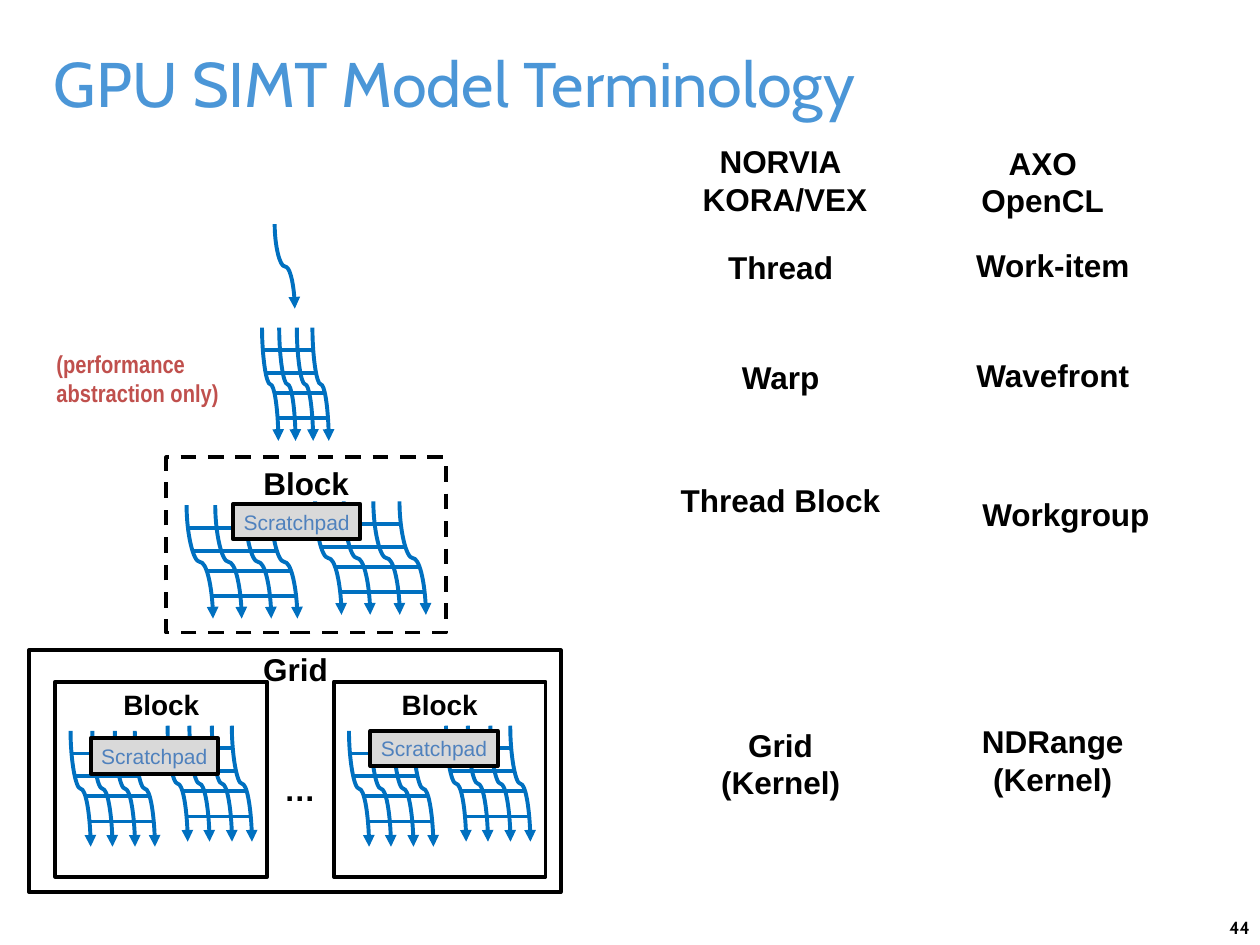
from lxml import etree
from pptx import Presentation
from pptx.dml.color import RGBColor
from pptx.enum.dml import MSO_LINE
from pptx.enum.shapes import MSO_CONNECTOR, MSO_SHAPE
from pptx.enum.text import MSO_ANCHOR, PP_ALIGN
from pptx.oxml.ns import qn
from pptx.util import Inches, Pt

RECTANGLE = MSO_SHAPE.RECTANGLE
STRAIGHT, CURVE = MSO_CONNECTOR.STRAIGHT, MSO_CONNECTOR.CURVE
LEFT, CENTER = PP_ALIGN.LEFT, PP_ALIGN.CENTER
MIDDLE, BOTTOM = MSO_ANCHOR.MIDDLE, MSO_ANCHOR.BOTTOM
DASH = MSO_LINE.DASH

BLACK = RGBColor(0x00, 0x00, 0x00)
TITLE_BLUE = RGBColor(0x4B, 0x96, 0xD7)
THREAD_BLUE = RGBColor(0x00, 0x70, 0xC0)
LABEL_BLUE = RGBColor(0x4F, 0x81, 0xBD)
NOTE_RED = RGBColor(0xC0, 0x50, 0x4D)
PAD_GRAY = RGBColor(0xD9, 0xD9, 0xD9)
LINE_WIDTH = Pt(2.25)

deck = Presentation()
deck.slide_width, deck.slide_height = Inches(10), Inches(7.5)
page = deck.slides.add_slide(deck.slide_layouts[6])


def add_label(text, left, top, width, height, size=18, font="Arial",
              color=BLACK, bold=True, align=CENTER, wrap=True, pad=False):
    """Write one paragraph per line, in a text box or in a filled scratchpad."""
    area = [Inches(value) for value in (left, top, width, height)]
    if pad:
        box = page.shapes.add_shape(RECTANGLE, *area)
        box.shadow.inherit = False
        box.fill.solid()
        box.fill.fore_color.rgb = PAD_GRAY
        box.line.color.rgb = BLACK
        box.line.width = LINE_WIDTH
        box.text_frame.vertical_anchor = MIDDLE
    else:
        box = page.shapes.add_textbox(*area)
    frame = box.text_frame
    frame.word_wrap = wrap
    for index, line in enumerate(text.split("\n")):
        para = frame.add_paragraph() if index else frame.paragraphs[0]
        para.alignment = align
        span = para.add_run()
        span.text = line
        span.font.name, span.font.size = font, Pt(size)
        span.font.bold = bold
        span.font.color.rgb = color
    return box


def add_threads(left, top, height, shift, spread=0):
    """Draw curved threads falling by height; a spread makes four, tied by rungs."""
    lines = []
    for fraction in (0, 0.34, 0.69, 1) if spread else (0,):
        # The curve runs sideways, so it is laid flat about its centre and turned.
        center_x = left + fraction * spread + shift / 2
        center_y = top + height / 2
        thread = page.shapes.add_connector(
            CURVE,
            Inches(center_x + height / 2), Inches(center_y - shift / 2),
            Inches(center_x - height / 2), Inches(center_y + shift / 2))
        thread._element.spPr.find(qn("a:xfrm")).set("rot", str(270 * 60000))
        lines.append((thread, True))
    if spread:
        for drop, drift in ((0.18, 0), (0.36, 0.2), (0.52, 0.73), (0.72, 1)):
            start, level = left + drift * shift, top + drop
            rung = page.shapes.add_connector(
                STRAIGHT, Inches(start), Inches(level),
                Inches(start + spread), Inches(level))
            lines.append((rung, False))
    for line, has_arrow in lines:
        line.line.color.rgb = THREAD_BLUE
        line.line.width = LINE_WIDTH
        properties = line._element.spPr
        if has_arrow:
            etree.SubElement(properties.find(qn("a:ln")), qn("a:tailEnd"), type="triangle")
        etree.SubElement(properties, qn("a:effectLst"))


title = add_label("GPU SIMT Model Terminology", 0.33, 0.25, 9.33, 0.75, size=36,
                  font="Cabin", color=TITLE_BLUE, bold=False, align=LEFT)
title.text_frame.vertical_anchor = BOTTOM
add_label("44", 9.66, 7.23, 0.44, 0.27, size=10, font="Cabin", align=LEFT, wrap=False)

# Single thread, warp, then the meshes of the thread block and of the grid
add_threads(2.18, 1.78, 0.67, 0.16)
add_threads(2.08, 2.6, 0.9, 0.13, spread=0.4)
for left, top in ((2.5, 3.98), (1.48, 4.01)):
    add_threads(left, top, 0.9, 0.21, spread=0.67)

GRID_BLOCKS = (0.44, 2.65)
for block_left in GRID_BLOCKS:
    add_threads(block_left + 0.89, 5.76, 0.92, 0.16, spread=0.51)
    add_threads(block_left + 0.12, 5.8, 0.92, 0.16, spread=0.51)
    add_label("Block", block_left, 5.41, 1.68, 0.37, size=16)
add_label("Block", 1.32, 3.63, 2.22, 0.4)
add_label("…", 2.13, 6.06, 0.5, 0.3)
add_label("Grid", 1.88, 5.11, 0.93, 0.4)

frames = [(1.32, 3.63, 2.22, 1.39, DASH), (0.23, 5.16, 4.22, 1.92, None)]
frames += [(block_left, 5.41, 1.68, 1.55, None) for block_left in GRID_BLOCKS]
for *area, dash in frames:
    outline = page.shapes.add_shape(RECTANGLE, *[Inches(value) for value in area])
    outline.shadow.inherit = False
    outline.fill.background()
    outline.line.color.rgb = BLACK
    outline.line.width = LINE_WIDTH
    if dash:
        outline.line.dash_style = dash

for left, top in ((1.85, 4), (0.72, 5.86), (2.94, 5.8)):
    add_label("Scratchpad", left, top, 1.01, 0.28, size=12, color=LABEL_BLUE,
              bold=False, wrap=False, pad=True)

# Terms of the two vendors
for text, left, top, width, height in (
    ("NORVIA\n KORA/VEX", 4.96, 1.08, 2.47, 0.71),
    ("AXO\nOpenCL", 7.55, 1.09, 1.45, 0.71),
    ("Thread", 5.47, 1.92, 1.45, 0.4),
    ("Work-item", 7.63, 1.9, 1.45, 0.4),
    ("Warp", 5.47, 2.79, 1.45, 0.4),
    ("Wavefront", 7.63, 2.78, 1.45, 0.4),
    ("Thread Block", 5.18, 3.77, 2.03, 0.4),
    ("Workgroup", 7.67, 3.88, 1.58, 0.4),
    ("Grid\n(Kernel)", 5.47, 5.71, 1.45, 0.71),
    ("NDRange\n(Kernel)", 7.63, 5.68, 1.45, 0.71),
):
    add_label(text, left, top, width, height)

add_label("(performance\nabstraction only)", 0.35, 2.72, 1.5, 0.57, size=14,
          font="Arial Narrow", color=NOTE_RED, align=LEFT, wrap=False)

deck.save("out.pptx")
